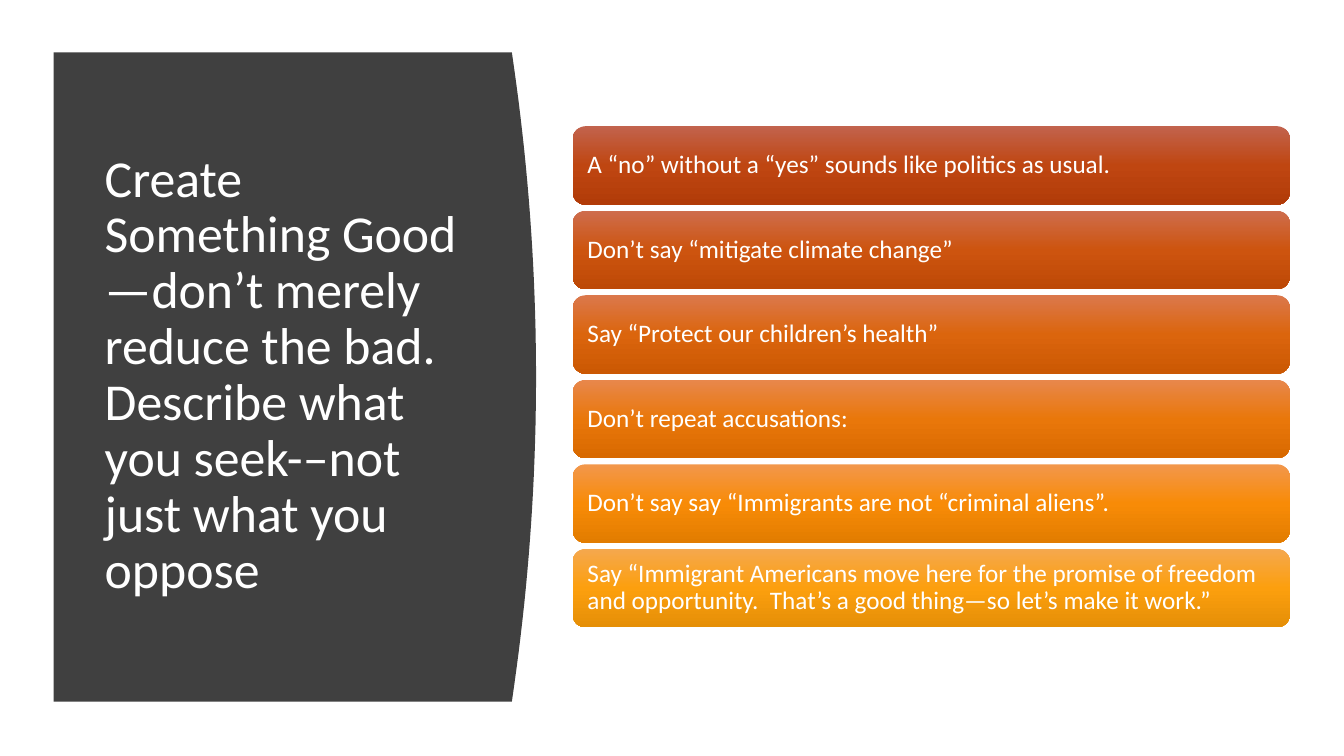
from copy import deepcopy

from pptx import Presentation
from pptx.dml.color import RGBColor
from pptx.enum.shapes import MSO_SHAPE
from pptx.enum.text import MSO_ANCHOR, PP_ALIGN
from pptx.oxml.ns import qn
from pptx.util import Cm, Pt

TITLE_LINES = (
    "Create Something Good—don’t merely reduce the bad.",
    "Describe what you seek-–not just what you oppose",
)
# Each tip: text, then gradient colours from top to bottom
TIPS = (
    ("A “no” without a “yes” sounds like politics as usual.",
     ("C2634D", "BF4611", "B13B08")),
    ("Don’t say “mitigate climate change”",
     ("CE6D4D", "CD540F", "BD4906")),
    ("Say “Protect our children’s health”",
     ("DB784C", "DB650D", "CB5803")),
    ("Don’t repeat accusations:",
     ("E8874C", "E9770A", "D86900")),
    ("Don’t say say “Immigrants are not “criminal aliens”.",
     ("F2974C", "F88B07", "E27C00")),
    ("Say “Immigrant Americans move here for the promise of freedom and "
     "opportunity.  That’s a good thing—so let’s make it work.”",
     ("F5A84E", "FC9F0E", "E58F07")),
)

FONT = "Calibri"
WHITE = RGBColor(0xFF, 0xFF, 0xFF)
CHARCOAL = RGBColor(0x40, 0x40, 0x40)

# Lengths in centimetres
PANEL_LEFT, PANEL_TOP, PANEL_RIGHT, PANEL_BOTTOM = 1.35, 1.32, 12.9, 17.68
PANEL_BULGE = 0.61
CURVE_STEPS = 40
TIP_LEFT, TIP_TOP, TIP_WIDTH, TIP_HEIGHT = 14.43, 3.18, 18.08, 1.98
TIP_PITCH = 2.13


def add_span(para, text, size):
    span = para.add_run()
    span.text = text
    span.font.name = FONT
    span.font.size = Pt(size)
    span.font.color.rgb = WHITE


def prepare_frame(frame):
    """Centre the text vertically, wrap it, and return its first paragraph."""
    frame.word_wrap = True
    frame.vertical_anchor = MSO_ANCHOR.MIDDLE
    para = frame.paragraphs[0]
    para.alignment = PP_ALIGN.LEFT
    para.line_spacing = 0.9
    return para


def add_panel(page):
    """Dark panel whose right side bows outward as a parabola."""
    half = (PANEL_BOTTOM - PANEL_TOP) / 2
    edge = []
    for step in range(CURVE_STEPS + 1):
        offset = 2 * step / CURVE_STEPS - 1
        edge.append((Cm(PANEL_RIGHT + PANEL_BULGE * (1 - offset ** 2)),
                     Cm(PANEL_TOP + half * (1 + offset))))
    builder = page.shapes.build_freeform(Cm(PANEL_LEFT), Cm(PANEL_TOP))
    builder.add_line_segments(edge + [(Cm(PANEL_LEFT), Cm(PANEL_BOTTOM))])
    panel = builder.convert_to_shape()
    panel.shadow.inherit = False
    panel.fill.solid()
    panel.fill.fore_color.rgb = CHARCOAL
    panel.line.fill.background()


def add_title(page):
    box = page.shapes.add_textbox(Cm(2.39), Cm(2.82), Cm(9.5), Cm(13.31))
    para = prepare_frame(box.text_frame)
    for index, line in enumerate(TITLE_LINES):
        if index:
            para.add_line_break()
        add_span(para, line, 37)


def fill_gradient(shape, colours):
    """Fill from top to bottom with three evenly spaced colours."""
    fill = shape.fill
    fill.gradient()
    fill.gradient_angle = 270
    first_stop = shape._element.spPr.find(".//" + qn("a:gs"))
    first_stop.addnext(deepcopy(first_stop))
    for index, (stop, colour) in enumerate(zip(fill.gradient_stops, colours)):
        stop.position = index / 2
        stop.color.rgb = RGBColor.from_string(colour)


def add_tip(page, row, text, colours):
    bar = page.shapes.add_shape(
        MSO_SHAPE.ROUNDED_RECTANGLE, Cm(TIP_LEFT), Cm(TIP_TOP + row * TIP_PITCH),
        Cm(TIP_WIDTH), Cm(TIP_HEIGHT))
    bar.shadow.inherit = False
    bar.line.fill.background()
    fill_gradient(bar, colours)
    frame = bar.text_frame
    frame.margin_left = frame.margin_right = Cm(0.28)
    frame.margin_top = frame.margin_bottom = Cm(0.28)
    add_span(prepare_frame(frame), text, 18)


def main():
    deck = Presentation()
    deck.slide_width, deck.slide_height = Cm(33.87), Cm(19.05)
    page = deck.slides.add_slide(deck.slide_layouts[6])
    add_panel(page)
    add_title(page)
    for row, (text, colours) in enumerate(TIPS):
        add_tip(page, row, text, colours)
    deck.save("out.pptx")


if __name__ == "__main__":
    main()
